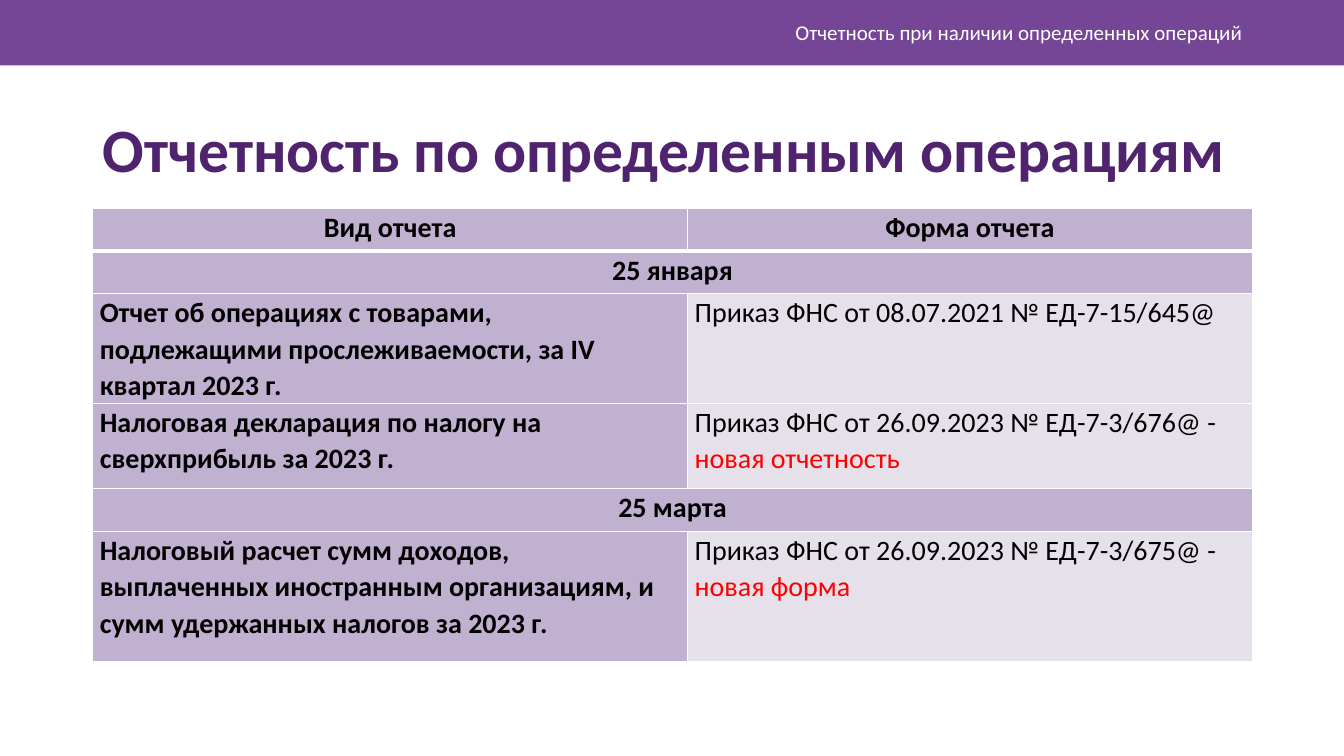
import pptx
import pptx.dml.color
import pptx.enum.shapes
import pptx.enum.text
import pptx.oxml.ns
import pptx.util
from lxml import etree
from pptx.dml.color import RGBColor
from pptx.enum.text import MSO_ANCHOR, PP_ALIGN
from pptx.util import Inches

WHITE = RGBColor(0xFF, 0xFF, 0xFF)
BLACK = RGBColor(0x00, 0x00, 0x00)
RED = RGBColor(0xFF, 0x00, 0x00)
PURPLE = RGBColor(0x76, 0x46, 0x96)
DARK_PURPLE = RGBColor(0x50, 0x23, 0x6E)
LILAC = RGBColor(0xC1, 0xB1, 0xD1)
PALE_LILAC = RGBColor(0xE6, 0xE0, 0xEB)

FONT = "Calibri"
LEFT, CONTENT_WIDTH = 0.92, 11.5
COLUMN_WIDTHS = (5.9, 5.6)

# Row height and its cells; a single cell spans the whole row.
# An order cell is a pair: the order and a remark shown in red.
REPORT_ROWS = [
    (0.42, ["Вид отчета", "Форма отчета"]),
    (0.42, ["25 января"]),
    (1.09, ["Отчет об операциях с товарами, подлежащими прослеживаемости, "
            "за IV квартал 2023 г.",
            ("Приказ ФНС от 08.07.2021 № ЕД-7-15/645@", "")]),
    (0.85, ["Налоговая декларация по налогу на сверхприбыль за 2023 г.",
            ("Приказ ФНС от 26.09.2023 № ЕД-7-3/676@ - ", "новая отчетность")]),
    (0.42, ["25 марта"]),
    (1.29, ["Налоговый расчет сумм доходов, выплаченных иностранным "
            "организациям, и сумм удержанных налогов за 2023 г.",
            ("Приказ ФНС от 26.09.2023 № ЕД-7-3/675@ - ", "новая форма")]),
]


def set_font(font, size, color, bold=False):
    font.name = FONT
    font.size = pptx.util.Pt(size)
    font.bold = bold
    font.color.rgb = color


def add_band(slide, width, height):
    band = slide.shapes.add_shape(
        pptx.enum.shapes.MSO_SHAPE.RECTANGLE, 0, 0, width, height)
    band.shadow.inherit = False
    band.fill.solid()
    band.fill.fore_color.rgb = PURPLE
    band.line.fill.background()


def add_text(slide, text, box, size, color, bold=False,
             align=PP_ALIGN.LEFT, anchor=MSO_ANCHOR.TOP, line_spacing=1.0):
    shape = slide.shapes.add_textbox(*(Inches(length) for length in box))
    frame = shape.text_frame
    frame.word_wrap = True
    frame.vertical_anchor = anchor
    paragraph = frame.paragraphs[0]
    paragraph.text = text
    paragraph.alignment = align
    paragraph.line_spacing = line_spacing
    set_font(paragraph.font, size, color, bold)


def set_borders(cell, top, bottom):
    """Draw white borders; top and bottom are widths in points."""
    properties = cell._tc.get_or_add_tcPr()
    for tag, width in (("lnL", 1), ("lnR", 1), ("lnT", top), ("lnB", bottom)):
        line = etree.SubElement(properties, pptx.oxml.ns.qn("a:" + tag),
                                w=str(pptx.util.Pt(width)))
        fill = etree.SubElement(line, pptx.oxml.ns.qn("a:solidFill"))
        etree.SubElement(fill, pptx.oxml.ns.qn("a:srgbClr"), val=str(WHITE))


def fill_cell(cell, content, centered):
    is_order = isinstance(content, tuple)
    cell.fill.solid()
    cell.fill.fore_color.rgb = PALE_LILAC if is_order else LILAC
    cell.margin_left = cell.margin_right = Inches(0.07)
    cell.margin_top = cell.margin_bottom = 0
    paragraph = cell.text_frame.paragraphs[0]
    paragraph.alignment = PP_ALIGN.CENTER if centered else PP_ALIGN.LEFT
    paragraph.line_spacing = 1.07
    set_font(paragraph.font, 20, BLACK, bold=not is_order)
    order, remark = content if is_order else (content, "")
    paragraph.add_run().text = order
    if remark:
        remark_run = paragraph.add_run()
        remark_run.text = remark
        remark_run.font.color.rgb = RED


def add_report_table(slide, top):
    total_height = sum(height for height, _ in REPORT_ROWS)
    table = slide.shapes.add_table(
        len(REPORT_ROWS), len(COLUMN_WIDTHS), Inches(LEFT), Inches(top),
        Inches(CONTENT_WIDTH), Inches(total_height)).table
    table.first_row = table.horz_banding = False
    for column, width in zip(table.columns, COLUMN_WIDTHS):
        column.width = Inches(width)
    for index, (height, contents) in enumerate(REPORT_ROWS):
        row = table.rows[index]
        row.height = Inches(height)
        for cell in row.cells:
            # The header is set off by a thicker line
            set_borders(cell, top=3 if index == 1 else 1,
                        bottom=3 if index == 0 else 1)
        is_date = len(contents) == 1
        if is_date:
            row.cells[0].merge(row.cells[1])
        for cell, content in zip(row.cells, contents):
            fill_cell(cell, content, centered=is_date or index == 0)


def main():
    presentation = pptx.Presentation()
    presentation.slide_width = Inches(13.33)
    presentation.slide_height = Inches(7.5)
    slide = presentation.slides.add_slide(presentation.slide_layouts[6])

    # Top band with the section name
    add_band(slide, presentation.slide_width, Inches(0.65))
    add_text(slide, "Отчетность при наличии определенных операций",
             (3.54, 0.12, 8.88, 0.4), 15, WHITE,
             align=PP_ALIGN.RIGHT, anchor=MSO_ANCHOR.MIDDLE)

    # Title
    add_text(slide, "Отчетность по определенным операциям",
             (LEFT, 1.13, CONTENT_WIDTH, 0.8), 44, DARK_PURPLE, bold=True,
             line_spacing=0.9)

    # Reports and their forms
    add_report_table(slide, 2.07)

    presentation.save("out.pptx")


if __name__ == "__main__":
    main()
